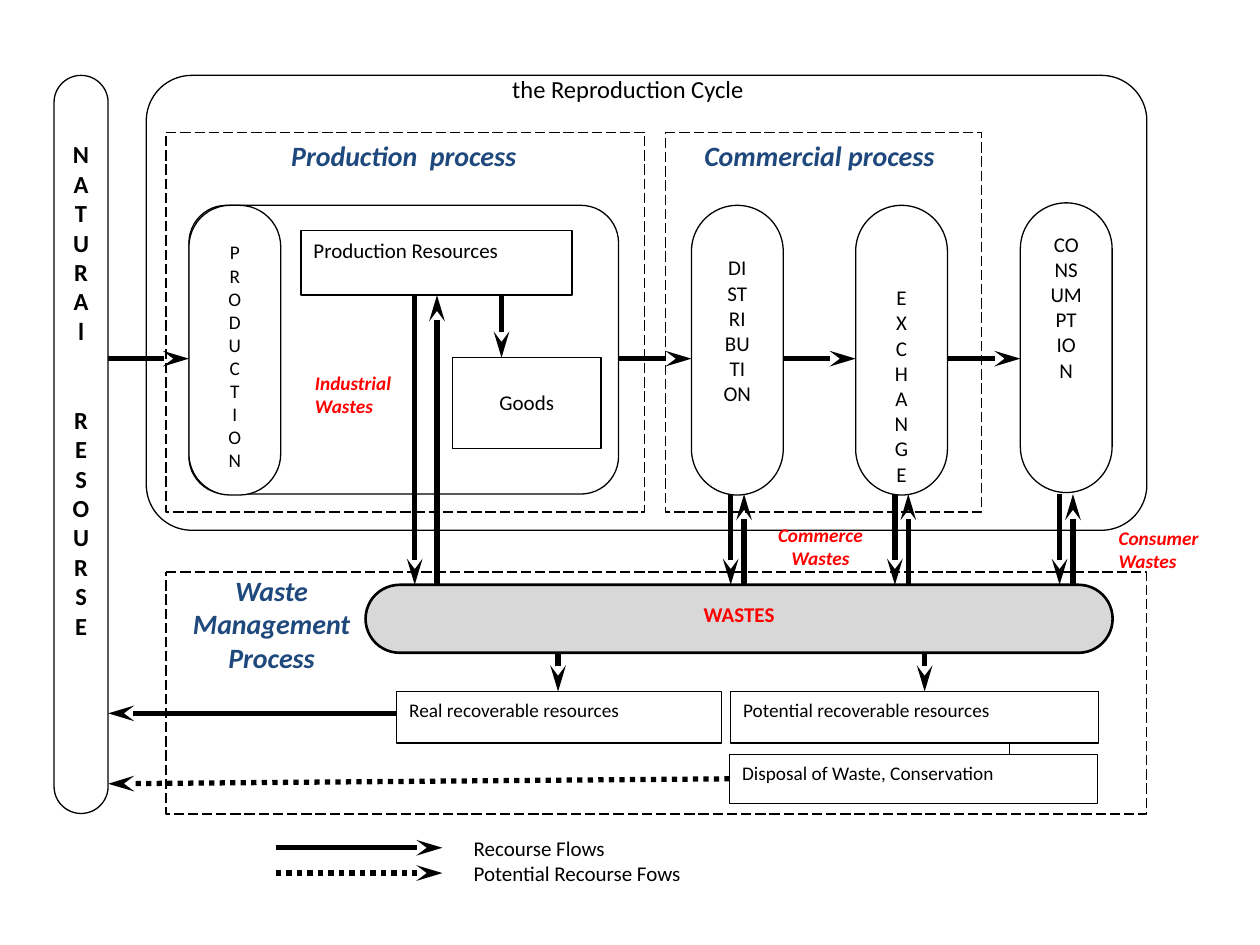
from lxml import etree
from pptx import Presentation
from pptx.dml.color import RGBColor
from pptx.enum import dml, shapes, text
from pptx.oxml import ns
from pptx.util import Cm, Pt

BLACK = RGBColor(0x00, 0x00, 0x00)
WHITE = RGBColor(0xFF, 0xFF, 0xFF)
GREY = RGBColor(0xD8, 0xD8, 0xD8)
RED = RGBColor(0xFF, 0x00, 0x00)
BLUE = RGBColor(0x1F, 0x49, 0x7D)
FONT = "Calibri"

LEFT, CENTER = text.PP_ALIGN.LEFT, text.PP_ALIGN.CENTER
DASH = dml.MSO_LINE.LONG_DASH
DOTS = dml.MSO_LINE.ROUND_DOT

FLOW_Y = 7.23        # height of the main flow between the stages
WASTES_TOP = 11.79
WASTES_BOTTOM = 13.16
RESOURCE_RIGHT = 2.18


def write(shape, lines, size, color=BLACK, align=CENTER, bold=False,
          italic=False, inset=0.13, side=0.25):
    """Fill a shape with one paragraph per line; inset (top) and side are in cm."""
    frame = shape.text_frame
    frame.word_wrap = True
    frame.auto_size = text.MSO_AUTO_SIZE.NONE
    frame.vertical_anchor = text.MSO_ANCHOR.TOP
    frame.margin_top, frame.margin_bottom = Cm(inset), Cm(0.1)
    frame.margin_left = frame.margin_right = Cm(side)
    frame.text = "\n".join(lines)
    for paragraph in frame.paragraphs:
        paragraph.alignment = align
        font = paragraph.font
        font.name, font.size = FONT, Pt(size)
        font.bold, font.italic = bold, italic
        font.color.rgb = color


def add_box(slide, left, top, width, height, corner=None, fill=WHITE,
            weight=0.75, dash=None):
    """Add an outlined box; corner is the rounding, None for a plain rectangle."""
    kind = shapes.MSO_SHAPE.RECTANGLE
    if corner is not None:
        kind = shapes.MSO_SHAPE.ROUNDED_RECTANGLE
    box = slide.shapes.add_shape(kind, Cm(left), Cm(top), Cm(width), Cm(height))
    if corner is not None:
        box.adjustments[0] = corner
    box.shadow.inherit = False
    box.fill.solid()
    box.fill.fore_color.rgb = fill
    box.line.color.rgb = BLACK
    box.line.width = Pt(weight)
    if dash:
        box.line.dash_style = dash
    return box


def add_label(slide, left, top, width, height, lines, size, **style):
    label = slide.shapes.add_textbox(Cm(left), Cm(top), Cm(width), Cm(height))
    write(label, lines, size, **style)


def add_line(slide, start, end, weight=3, dash=None, arrow=True):
    """Draw a line whose arrowhead, if any, sits at the end point."""
    line = slide.shapes.add_connector(
        shapes.MSO_CONNECTOR.STRAIGHT, *(Cm(value) for value in (*start, *end)))
    line.line.color.rgb = BLACK
    line.line.width = Pt(weight)
    if dash:
        line.line.dash_style = dash
    properties = line.element.spPr
    if arrow:
        etree.SubElement(properties.find(ns.qn("a:ln")), ns.qn("a:tailEnd"),
                         type="stealth", w="med", len="lg")
    etree.SubElement(properties, ns.qn("a:effectLst"))


def add_exchange_pair(slide, x, top, gap):
    """Draw a downward arrow to the wastes and an upward one beside it."""
    add_line(slide, (x, top), (x, WASTES_TOP))
    add_line(slide, (x + gap, WASTES_TOP), (x + gap, top))


def add_frames(slide):
    add_box(slide, 2.95, 1.52, 20.17, 9.17, corner=0.1)
    for left, top, width, height in [(13.41, 2.67, 6.38, 7.65),
                                     (3.35, 2.67, 9.65, 7.65),
                                     (3.35, 11.53, 19.76, 4.88)]:
        add_box(slide, left, top, width, height, corner=0, dash=DASH)
    add_box(slide, 3.81, 4.14, 8.66, 5.82, corner=0.13)


def add_title(slide):
    title = slide.shapes.title
    title.left, title.top = Cm(6.22), Cm(1.37)
    title.width, title.height = Cm(12.88), Cm(1.14)
    write(title, ["the Reproduction Cycle"], 14)
    title.element.getparent().append(title.element)  # in front of the frames


def add_stages(slide):
    resource = add_box(slide, 1.09, 1.52, 1.09, 14.88, corner=0.5)
    write(resource, "NATURAlRESOURSE", 14, bold=True, inset=1.13, side=0.1)
    resource.text_frame.paragraphs[len("NATURAl")].space_before = Pt(34)

    stages = [
        (3.81, 4.14, 0.45, "PRODUCTION", 11, 0.47),
        (13.94, 4.14, 0.5, ["DI", "ST", "RI", "BU", "TI", "ON"], 12, 0.73),
        (17.25, 4.14, 0.5, "EXCHANGE", 12, 1.33),
        (20.57, 4.09, 0.5, ["CO", "NS", "UM", "PT", "IO", "N"], 12, 0.3),
    ]
    for left, top, corner, lines, size, inset in stages:
        stage = add_box(slide, left, top, 1.85, 5.84, corner=corner)
        write(stage, lines, size, inset=inset)


def add_resources(slide):
    resources = [
        (6.07, 4.65, 5.46, 1.3, "Production Resources", 12),
        (8, 13.94, 6.55, 1.04, "Real recoverable resources", 11),
        (14.73, 13.94, 7.42, 1.04, "Potential recoverable resources", 11),
        (14.71, 15.21, 7.42, 0.99, "Disposal of Waste, Conservation", 11),
    ]
    for left, top, width, height, name, size in resources:
        box = add_box(slide, left, top, width, height)
        write(box, [name], size, align=LEFT)
    goods = add_box(slide, 9.12, 7.21, 3, 1.83)
    write(goods, ["Goods"], 12, inset=0.64)
    wastes = add_box(slide, 7.37, WASTES_TOP, 15.06, WASTES_BOTTOM - WASTES_TOP,
                     corner=0.5, fill=GREY, weight=1.5)
    write(wastes, ["WASTES"], 12, color=RED, bold=True)


def add_flows(slide):
    for start, end in [(RESOURCE_RIGHT, 3.81), (12.47, 13.94),
                       (15.8, 17.25), (19.1, 20.57)]:
        add_line(slide, (start, FLOW_Y), (end, FLOW_Y))
    add_exchange_pair(slide, 8.36, 5.95, 0.45)
    for x in (14.73, 18.04, 21.36):
        add_exchange_pair(slide, x, 9.96, 0.27)
    add_line(slide, (10.11, 5.95), (10.11, 7.21))
    for x in (11.25, 18.64):
        add_line(slide, (x, WASTES_BOTTOM), (x, 13.94))
    add_line(slide, (20.35, 14.98), (20.35, 15.21), weight=0.75, arrow=False)
    add_line(slide, (8, 14.38), (RESOURCE_RIGHT, 14.38))
    add_line(slide, (14.71, 15.7), (RESOURCE_RIGHT, 15.8), dash=DOTS)


def add_captions(slide):
    processes = [
        (3.35, 2.67, 9.58, 1.45, "Production  process"),
        (12.47, 2.67, 8.1, 1.5, "Commercial process"),
        (2.95, 11.43, 5.05, 3.2, "Waste Management Process"),
    ]
    for left, top, width, height, name in processes:
        add_label(slide, left, top, width, height, [name], 16,
                  color=BLUE, bold=True, italic=True)

    wastes = [
        (6.1, 6.4, 2.39, 3.28, ["Industrial Wastes"], LEFT, 1.08, 0.25),
        (15.49, 9.12, 2.1, 2.39, ["Commerce", "Wastes"], CENTER, 1.42, 0),
        (22.3, 9.53, 2.39, 2.87, ["Consumer", "Wastes"], LEFT, 1.08, 0.25),
    ]
    for left, top, width, height, lines, align, inset, side in wastes:
        add_label(slide, left, top, width, height, lines, 11, color=RED,
                  align=align, bold=True, italic=True, inset=inset, side=side)


def add_legend(slide):
    for y, dash in [(17.09, None), (17.6, DOTS)]:
        add_line(slide, (5.56, y), (8.92, y), dash=dash)
    add_label(slide, 9.3, 16.71, 11.94, 1.68,
              ["Recourse Flows", "Potential Recourse Fows"], 12, align=LEFT)


def main():
    presentation = Presentation()
    presentation.slide_width, presentation.slide_height = Cm(25.4), Cm(19.05)
    slide = presentation.slides.add_slide(presentation.slide_layouts[5])
    add_frames(slide)
    add_title(slide)
    add_stages(slide)
    add_resources(slide)
    add_flows(slide)
    add_captions(slide)
    add_legend(slide)
    presentation.save("out.pptx")


if __name__ == "__main__":
    main()
